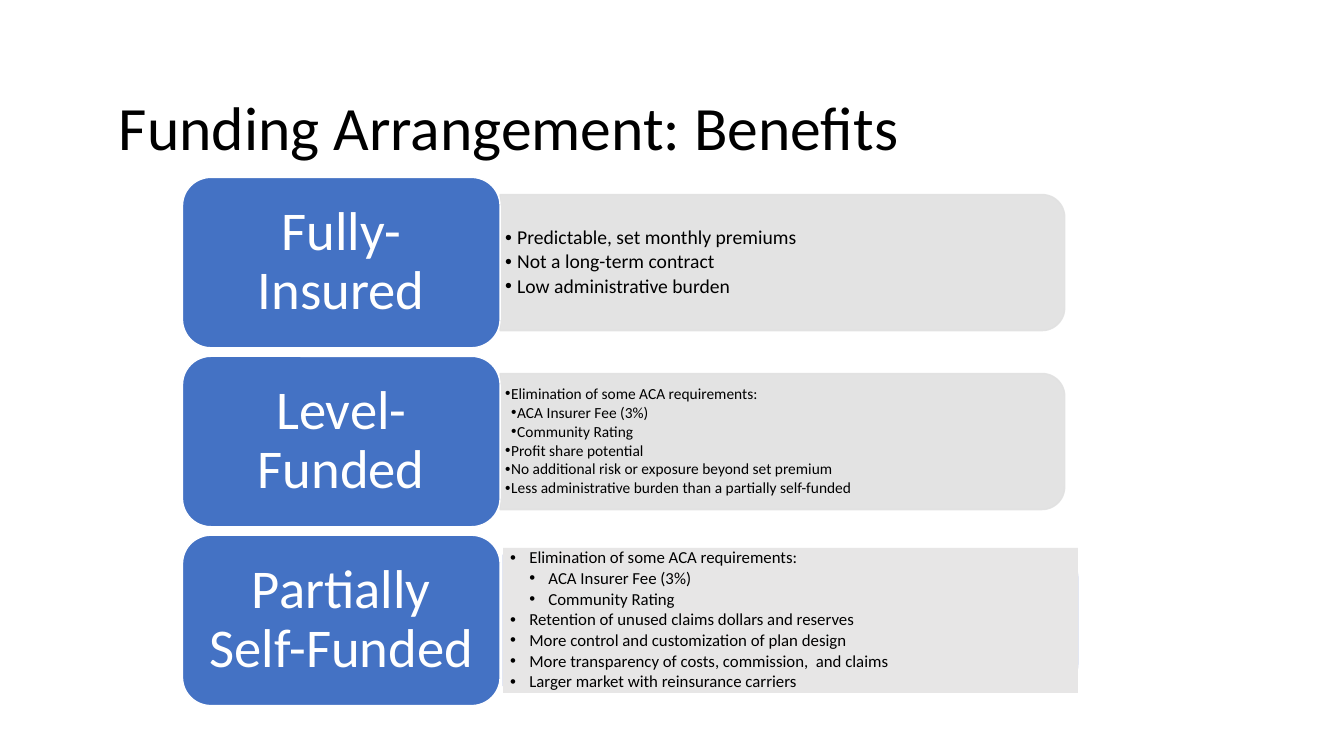
"""Build the slide on the benefits of three funding arrangements."""
from lxml import etree
from pptx import Presentation
from pptx import util as u
from pptx.dml.color import RGBColor
from pptx.enum import shapes, text
from pptx.oxml.ns import qn


def paint(fmt, color, alpha=100):
    fmt.solid()
    fmt.fore_color.rgb = RGBColor.from_string(color)
    if alpha < 100:
        for clr in fmt._xPr.iter(qn("a:srgbClr")):
            etree.SubElement(clr, qn("a:alpha"), val=str(alpha * 1000))


def write(p, words, size, color, after=0):
    p.line_spacing = 0.9
    p.space_after = u.Pt(round(size * after, 2))
    r = p.add_run()
    r.text = words
    r.font.size = u.Pt(size)
    r.font.name = "Calibri"
    paint(r.font.fill, color)


prs = Presentation()
prs.slide_width, prs.slide_height = u.Inches(13.33), u.Inches(7.5)
s = prs.slides.add_slide(prs.slide_layouts[6])

LEFT, TOP = 1.81, 1.76
LABEL_W, LABEL_H, PITCH = 3.15, 1.69, 1.775
EDGE = LEFT + LABEL_W

arrangements = [
    dict(name="Fully-Insured", size=14, hang=0.12, step=0.12, gap=0,
         panel=(5.6, 1.35), box=(5.53, 1.22), inset=(0.05, 0.02),
         fill=("E1E1E1", 90), line="E1E1E1", benefits=[
             (0, "Predictable, set monthly premiums"),
             (0, "Not a long-term contract"),
             (0, "Low administrative burden")]),
    dict(name="Level-Funded", size=11, hang=0.06, step=0.06, gap=0,
         panel=(5.6, 1.35), box=(5.53, 1.22), inset=(0.05, 0.02),
         fill=("E1E1E1", 90), line="E1E1E1", benefits=[
             (0, "Elimination of some ACA requirements:"),
             (1, "ACA Insurer Fee (3%)"),
             (1, "Community Rating"),
             (0, "Profit share potential"),
             (0, "No additional risk or exposure beyond set premium"),
             (0, "Less administrative burden than a partially self-funded")]),
    dict(name="Partially Self-Funded", size=12, hang=0.19, step=0.19, gap=0.03,
         panel=(5.7, 1.3), box=(5.7, 1.44), inset=(0.07, 0.03),
         fill=("E7E6E6", 100), line="CFD5EA", benefits=[
             (0, "Elimination of some ACA requirements:"),
             (1, "ACA Insurer Fee (3%)"),
             (1, "Community Rating"),
             (0, "Retention of unused claims dollars and reserves"),
             (0, "More control and customization of plan design"),
             (0, "More transparency of costs, commission,  and claims"),
             (0, "Larger market with reinsurance carriers")]),
]

for row, item in enumerate(arrangements):
    top = TOP + row * PITCH
    middle = top + LABEL_H / 2
    start = EDGE + item["gap"]

    label = s.shapes.add_shape(
        shapes.MSO_SHAPE.ROUNDED_RECTANGLE,
        *map(u.Inches, (LEFT, top, LABEL_W, LABEL_H)))
    long, short = item["panel"]
    panel = s.shapes.add_shape(
        shapes.MSO_SHAPE.ROUND_2_SAME_RECTANGLE,
        *map(u.Inches, (start + (long - short) / 2, middle - long / 2, short, long)))
    panel.rotation = 90
    label._element.addprevious(panel._element)
    for sp, fill, line in ((label, ("4472C4", 100), ("FFFFFF", 100)),
                           (panel, item["fill"], (item["line"], 90))):
        sp.shadow.inherit = False
        paint(sp.fill, *fill)
        paint(sp.line.fill, *line)
        sp.line.width = u.Pt(1)

    tf = label.text_frame
    tf.word_wrap = True
    tf.vertical_anchor = text.MSO_ANCHOR.MIDDLE
    tf.margin_left = tf.margin_right = u.Inches(0.16)
    tf.margin_top = tf.margin_bottom = u.Inches(0.08)
    tf.paragraphs[0].alignment = text.PP_ALIGN.CENTER
    write(tf.paragraphs[0], item["name"], 39, "FFFFFF", 0.35)

    width, height = item["box"]
    box = s.shapes.add_textbox(
        *map(u.Inches, (start, middle - height / 2, width, height)))
    if item["gap"]:
        paint(box.fill, *item["fill"])
    tf = box.text_frame
    tf.word_wrap = True
    tf.vertical_anchor = text.MSO_ANCHOR.MIDDLE
    tf.margin_left = tf.margin_right = u.Inches(item["inset"][0])
    tf.margin_top = tf.margin_bottom = u.Inches(item["inset"][1])
    for i, (level, benefit) in enumerate(item["benefits"]):
        p = tf.add_paragraph() if i else tf.paragraphs[0]
        p.level = level + 1
        write(p, benefit, item["size"], "000000", 0.15)
        pPr = p._p.get_or_add_pPr()
        pPr.set("marL", str(u.Inches(item["hang"] + level * item["step"])))
        pPr.set("indent", str(-u.Inches(item["hang"])))
        etree.SubElement(pPr, qn("a:buFont"), typeface="Arial")
        etree.SubElement(pPr, qn("a:buChar"), char="•")

title = s.shapes.add_textbox(*map(u.Inches, (1.08, 0.57, 11.5, 1.45)))
title.text_frame.word_wrap = True
title.text_frame.vertical_anchor = text.MSO_ANCHOR.MIDDLE
write(title.text_frame.paragraphs[0], "Funding Arrangement: Benefits", 44, "000000")

prs.save("out.pptx")
